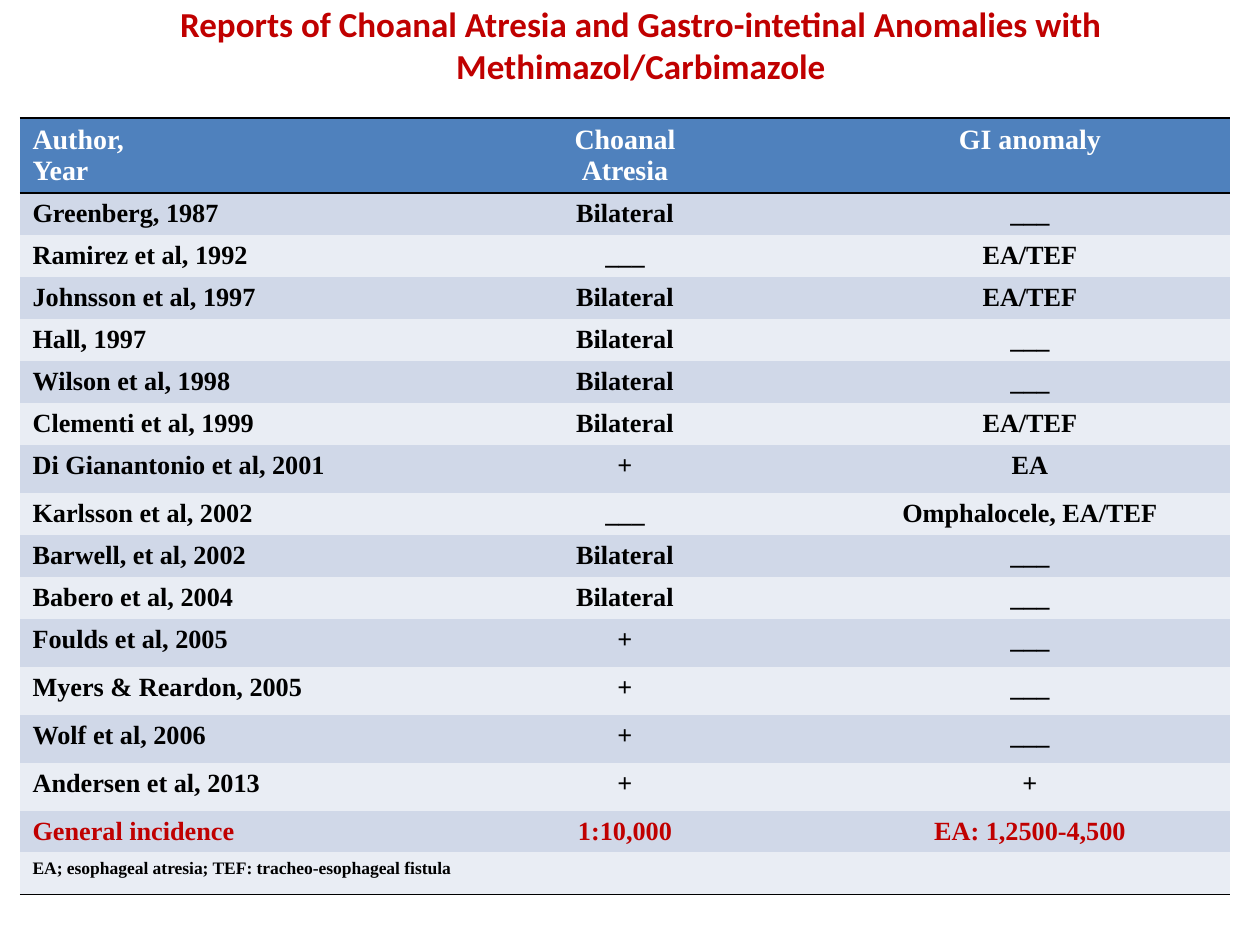
from lxml.etree import SubElement
from pptx import Presentation
from pptx.dml.color import RGBColor
from pptx.enum.text import MSO_ANCHOR, PP_ALIGN
from pptx.oxml.ns import qn
from pptx.util import Pt

TITLE = ("Reports of Choanal Atresia and Gastro-intetinal Anomalies with "
         "Methimazol/Carbimazole")
NONE = "___"
HEADER = ("Author,\nYear", "Choanal\nAtresia", "GI anomaly")
REPORTS = [
    ("Greenberg, 1987", "Bilateral", NONE),
    ("Ramirez et al, 1992", NONE, "EA/TEF"),
    ("Johnsson et al, 1997", "Bilateral", "EA/TEF"),
    ("Hall, 1997", "Bilateral", NONE),
    ("Wilson et al, 1998", "Bilateral", NONE),
    ("Clementi et al, 1999", "Bilateral", "EA/TEF"),
    ("Di Gianantonio et al, 2001", "+", "EA"),
    ("Karlsson et al, 2002", NONE, "Omphalocele, EA/TEF"),
    ("Barwell, et al, 2002", "Bilateral", NONE),
    ("Babero et al, 2004", "Bilateral", NONE),
    ("Foulds et al, 2005", "+", NONE),
    ("Myers & Reardon, 2005", "+", NONE),
    ("Wolf et al, 2006", "+", NONE),
    ("Andersen et al, 2013", "+", "+"),
]
INCIDENCE = ("General incidence", "1:10,000", "EA: 1,2500-4,500")
FOOTNOTE = ("EA; esophageal atresia; TEF: tracheo-esophageal fistula", "", "")

WHITE = RGBColor(0xFF, 0xFF, 0xFF)
BLACK = RGBColor(0x00, 0x00, 0x00)
RED = RGBColor(0xC0, 0x00, 0x00)
BLUE = RGBColor(0x4F, 0x81, 0xBD)
BANDS = (RGBColor(0xE9, 0xED, 0xF4), RGBColor(0xD0, 0xD8, 0xE8))

# (texts, size in points, text colour)
ROWS = ([(HEADER, 16, WHITE)]
        + [(report, 15, BLACK) for report in REPORTS]
        + [(INCIDENCE, 15, RED), (FOOTNOTE, 10, BLACK)])
COL_WIDTHS = (400, 410, 400)
HEADER_H, ROW_H, TALL_ROW_H = 75, 42, 48
TABLE_LEFT, TABLE_TOP = 20, 118
NO_STYLE = "{2D5ABB26-0587-4C30-8999-92F81FD0307C}"


def px(n):
    return round(n * 914400 / 126)


def row_height(i, texts):
    if i == 0:
        return HEADER_H
    return TALL_ROW_H if texts[1] == "+" else ROW_H


def add_text(p, text, font, size, color, align):
    p.alignment = align
    r = p.add_run()
    r.text = text
    r.font.name = font
    r.font.size = Pt(size)
    r.font.bold = True
    r.font.color.rgb = color


def add_border(cell, side):
    """Draw a black 1 pt edge; side is lnT or lnB. Must come before the fill."""
    ln = SubElement(cell._tc.get_or_add_tcPr(), qn(f"a:{side}"), w=str(Pt(1)))
    SubElement(SubElement(ln, qn("a:solidFill")), qn("a:srgbClr"), val=str(BLACK))


def add_title(slide):
    tf = slide.shapes.add_textbox(px(69), 0, px(1144), px(90)).text_frame
    tf.word_wrap = True
    tf.vertical_anchor = MSO_ANCHOR.MIDDLE
    add_text(tf.paragraphs[0], TITLE, "Calibri", 20, RED, PP_ALIGN.CENTER)


def add_reports_table(slide):
    heights = [row_height(i, texts) for i, (texts, _, _) in enumerate(ROWS)]
    table = slide.shapes.add_table(
        len(ROWS), len(COL_WIDTHS), px(TABLE_LEFT), px(TABLE_TOP),
        px(sum(COL_WIDTHS)), px(sum(heights))).table
    table.first_row = table.horz_banding = False
    table._tbl.tblPr.find(qn("a:tableStyleId")).text = NO_STYLE
    for col, width in zip(table.columns, COL_WIDTHS):
        col.width = px(width)

    last = len(ROWS) - 1
    for i, (texts, size, color) in enumerate(ROWS):
        table.rows[i].height = px(heights[i])
        for j, text in enumerate(texts):
            cell = table.cell(i, j)
            cell.margin_bottom = 0
            if i == 0:
                add_border(cell, "lnT")
            if i in (0, last):
                add_border(cell, "lnB")
            cell.fill.solid()
            cell.fill.fore_color.rgb = BANDS[i % 2] if i else BLUE
            if not text:
                cell.text_frame.paragraphs[0].font.size = Pt(size)
                continue
            tf = cell.text_frame
            for k, line in enumerate(text.split("\n")):
                p = tf.add_paragraph() if k else tf.paragraphs[0]
                add_text(p, line, "Times New Roman", size, color,
                         PP_ALIGN.CENTER if j else PP_ALIGN.LEFT)
    table.cell(last, 0).merge(table.cell(last, len(COL_WIDTHS) - 1))


def main():
    prs = Presentation()
    prs.slide_width, prs.slide_height = px(1260), px(945)
    slide = prs.slides.add_slide(prs.slide_layouts[6])
    add_title(slide)
    add_reports_table(slide)
    prs.save("out.pptx")


if __name__ == "__main__":
    main()
